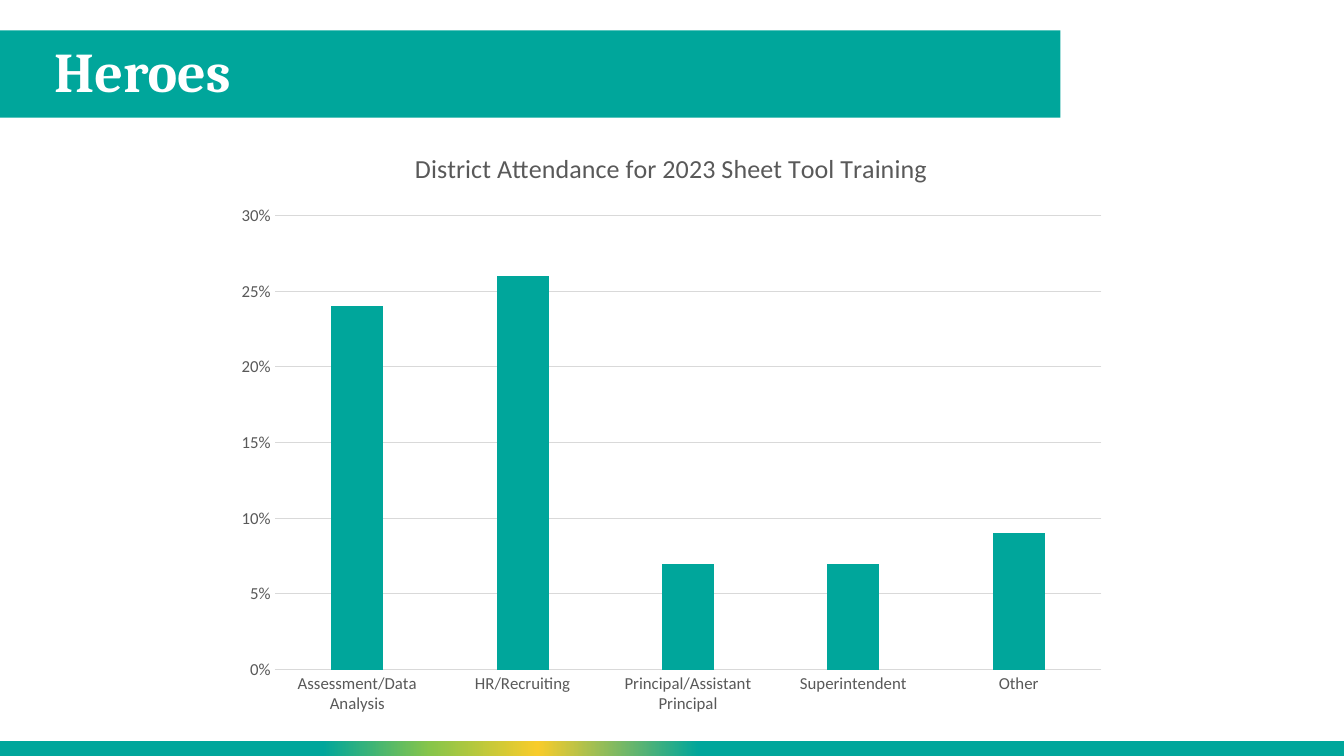
"""Build the Heroes slide with its district attendance chart."""
from dataclasses import dataclass
from typing import Optional

from lxml import etree
from pptx import Presentation
from pptx import util as u
from pptx.chart.data import CategoryChartData
from pptx.dml.color import RGBColor
from pptx.enum import chart as ch, shapes, text
from pptx.oxml import ns

PX = 9525
COLORS = {"teal": "00A69B", "yellow": "F8CC2B", "green": "87C54A",
          "white": "FFFFFF", "gray": "595959", "grid": "D9D9D9"}
STOPS = ((0, "teal"), (48, "teal"), (60, "yellow"),
         (68, "green"), (76, "teal"), (100, "teal"))
ATTENDANCE = {
    "Assessment/Data Analysis": 0.24,
    "HR/Recruiting": 0.26,
    "Principal/Assistant Principal": 0.07,
    "Superintendent": 0.07,
    "Other": 0.09,
}


@dataclass
class Band:
    x: int
    y: int
    w: int
    h: int
    stops: Optional[tuple] = None


BANDS = (Band(0, 29, 1010, 83), Band(0, 706, 1280, 14, STOPS))


def px(*lengths: int) -> list:
    return [u.Emu(n * PX) for n in lengths]


def rgb(name: str) -> RGBColor:
    return RGBColor.from_string(COLORS[name])


def style_font(font, size: float, color: str, name: str = "Calibri", bold: bool = False) -> None:
    font.size = u.Pt(size)
    font.name = name
    font.bold = bold
    font.color.rgb = rgb(color)


def set_gradient(sp, stops: tuple) -> None:
    sp.fill.gradient()
    sp.fill.gradient_angle = 180
    gs_list = sp._element.spPr.find(".//" + ns.qn("a:gsLst"))
    for gs in list(gs_list):
        gs_list.remove(gs)
    for pos, color in stops:
        gs = etree.SubElement(gs_list, ns.qn("a:gs"), pos=str(pos * 1000))
        etree.SubElement(gs, ns.qn("a:srgbClr"), val=COLORS[color])


def draw_band(s, band: Band) -> None:
    sp = s.shapes.add_shape(shapes.MSO_SHAPE.RECTANGLE, *px(band.x, band.y, band.w, band.h))
    sp.shadow.inherit = False
    sp.line.fill.background()
    if band.stops:
        set_gradient(sp, band.stops)
    else:
        sp.fill.solid()
        sp.fill.fore_color.rgb = rgb("teal")


def set_title(s) -> None:
    sp = s.shapes.title
    s.shapes._spTree.append(sp._element)
    sp.left, sp.top, sp.width, sp.height = px(42, 29, 966, 83)
    tf = sp.text_frame
    tf.text = "Heroes"
    tf.word_wrap = True
    tf.auto_size = text.MSO_AUTO_SIZE.NONE
    tf.vertical_anchor = text.MSO_ANCHOR.MIDDLE
    p = tf.paragraphs[0]
    p.alignment = text.PP_ALIGN.LEFT
    p.line_spacing = 0.9
    style_font(p.runs[0].font, 40, "white", "Cambria", True)


def style_line(line, color: str) -> None:
    line.color.rgb = rgb(color)
    line.width = u.Pt(0.75)


def add_attendance_chart(s) -> None:
    data = CategoryChartData(number_format="0%")
    data.categories = list(ATTENDANCE)
    data.add_series("Series 1", list(ATTENDANCE.values()))
    chart = s.shapes.add_chart(ch.XL_CHART_TYPE.COLUMN_STACKED,
                               *px(213, 122, 853, 569), data).chart
    chart.font.name = "Calibri"
    chart.font.size = u.Pt(10)
    chart.has_legend = False
    chart.has_title = True
    tf = chart.chart_title.text_frame
    tf.text = "District Attendance for 2023 Sheet Tool Training"
    style_font(tf.paragraphs[0].runs[0].font, 18.6, "gray")
    chart.chart_title.include_in_layout = False

    plot = chart.plots[0]
    plot.gap_width = 219
    plot.overlap = 100
    plot.vary_by_categories = False
    fill = plot.series[0].format.fill
    fill.solid()
    fill.fore_color.rgb = rgb("teal")

    for axis in (chart.category_axis, chart.value_axis):
        axis.major_tick_mark = axis.minor_tick_mark = ch.XL_TICK_MARK.NONE
        style_font(axis.tick_labels.font, 12, "gray")
    style_line(chart.category_axis.format.line, "grid")
    values = chart.value_axis
    values.format.line.fill.background()
    values.minimum_scale, values.maximum_scale, values.major_unit = 0, 0.3, 0.05
    values.tick_labels.number_format = "0%"
    values.tick_labels.number_format_is_linked = False
    values.has_major_gridlines = True
    style_line(values.major_gridlines.format.line, "grid")


def main() -> None:
    prs = Presentation()
    prs.slide_width, prs.slide_height = px(1280, 720)
    s = prs.slides.add_slide(prs.slide_layouts[5])
    for band in BANDS:
        draw_band(s, band)
    set_title(s)
    add_attendance_chart(s)
    prs.save("out.pptx")


if __name__ == "__main__":
    main()
